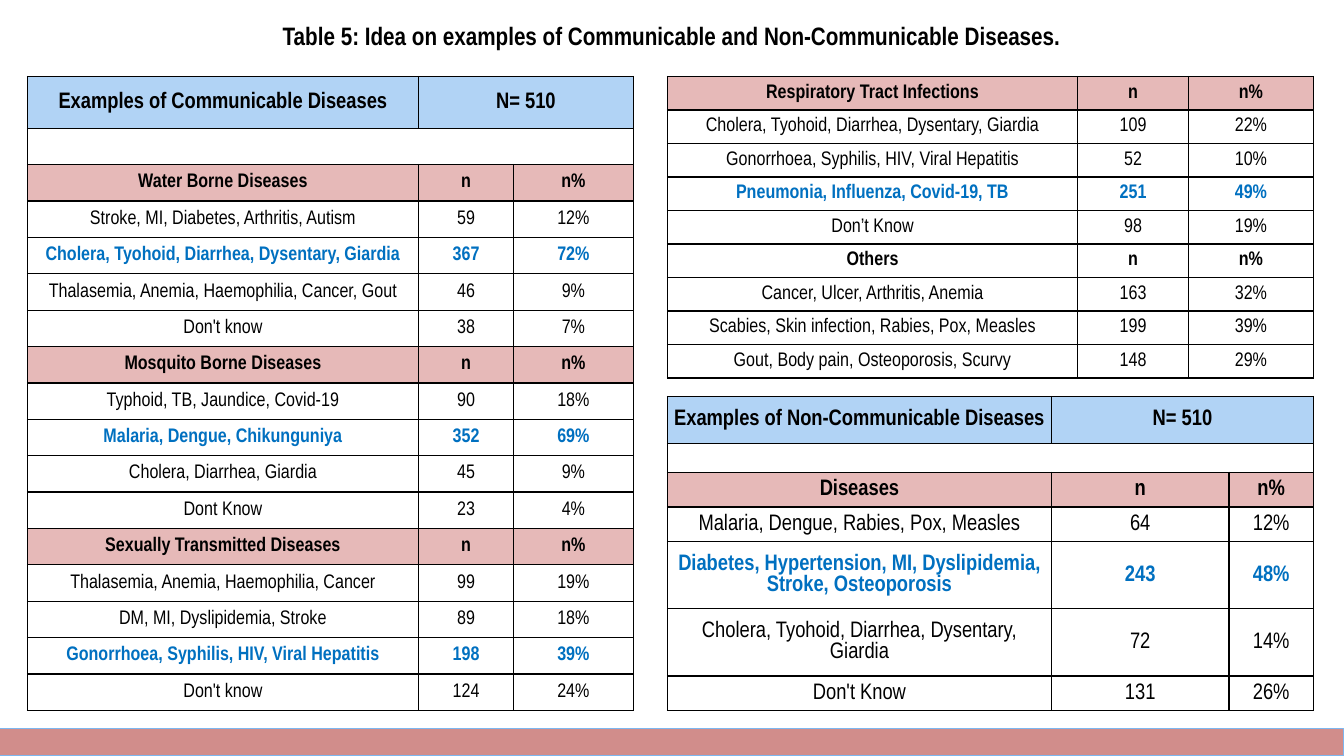
from dataclasses import dataclass
from typing import NamedTuple, Optional

from lxml import etree
from pptx import Presentation
from pptx.dml import color, fill
from pptx.enum import shapes, text
from pptx.oxml import ns
from pptx.util import Cm, Pt

FONT = "Arial Narrow"
COLOURS = {
    "black": "000000",
    "white": "FFFFFF",
    "answer": "0070C0",
    "band": "B1D3F5",
    "section": "E6B9B8",
    "footer": "D18D8B",
    "footer_line": "7DB6EF",
}


class Style(NamedTuple):
    fill: str
    colour: str
    bold: bool


BAND = Style("band", "black", True)
SECTION = Style("section", "black", True)
PLAIN_SECTION = Style("white", "black", True)
OPTION = Style("white", "black", False)
ANSWER = Style("white", "answer", True)


@dataclass
class Row:
    cells: tuple[str, ...]
    style: Style = OPTION
    height: Optional[float] = None  # rows without one share what is left


@dataclass
class DiseaseTable:
    left: float
    top: float
    height: float
    columns: tuple[float, ...]
    size: int
    rows: list[Row]


def section(name: str, style: Style = SECTION) -> Row:
    return Row((name, "n", "n%"), style)


def band(name: str, height: float) -> Row:
    return Row((name, "N= 510"), BAND, height)


# Table contents
communicable = DiseaseTable(0.69, 1.93, 15.98, (9.86, 2.39, 3.02), 14, [
    band("Examples of Communicable Diseases", 1.3),
    Row(("",)),
    section("Water Borne Diseases"),
    Row(("Stroke, MI, Diabetes, Arthritis, Autism", "59", "12%")),
    Row(("Cholera, Tyohoid, Diarrhea, Dysentary, Giardia", "367", "72%"), ANSWER),
    Row(("Thalasemia, Anemia, Haemophilia, Cancer, Gout", "46", "9%")),
    Row(("Don't know", "38", "7%")),
    section("Mosquito Borne Diseases"),
    Row(("Typhoid, TB, Jaundice, Covid-19", "90", "18%")),
    Row(("Malaria, Dengue, Chikunguniya", "352", "69%"), ANSWER),
    Row(("Cholera, Diarrhea, Giardia", "45", "9%")),
    Row(("Dont Know", "23", "4%")),
    section("Sexually Transmitted Diseases"),
    Row(("Thalasemia, Anemia, Haemophilia, Cancer", "99", "19%")),
    Row(("DM, MI, Dyslipidemia, Stroke", "89", "18%")),
    Row(("Gonorrhoea, Syphilis, HIV, Viral Hepatitis", "198", "39%"), ANSWER),
    Row(("Don't know", "124", "24%")),
])

respiratory = DiseaseTable(16.82, 1.93, 7.6, (10.34, 2.79, 3.15), 14, [
    section("Respiratory Tract Infections"),
    Row(("Cholera, Tyohoid, Diarrhea, Dysentary, Giardia", "109", "22%")),
    Row(("Gonorrhoea, Syphilis, HIV, Viral Hepatitis", "52", "10%")),
    Row(("Pneumonia, Influenza, Covid-19, TB", "251", "49%"), ANSWER),
    Row(("Don’t Know", "98", "19%")),
    section("Others", PLAIN_SECTION),
    Row(("Cancer, Ulcer, Arthritis, Anemia", "163", "32%")),
    Row(("Scabies, Skin infection, Rabies, Pox, Measles", "199", "39%")),
    Row(("Gout, Body pain, Osteoporosis, Scurvy", "148", "29%")),
])

non_communicable = DiseaseTable(16.82, 9.99, 7.92, (9.68, 4.47, 2.13), 16, [
    band("Examples of Non-Communicable Diseases", 1.19),
    Row(("",), height=0.72),
    section("Diseases"),
    Row(("Malaria, Dengue, Rabies, Pox, Measles", "64", "12%")),
    Row(("Diabetes, Hypertension, MI, Dyslipidemia, Stroke, Osteoporosis",
         "243", "48%"), ANSWER, 1.69),
    Row(("Cholera, Tyohoid, Diarrhea, Dysentary, Giardia", "72", "14%"),
        height=1.69),
    Row(("Don't Know", "131", "26%")),
])


def rgb(name: str) -> color.RGBColor:
    return color.RGBColor.from_string(COLOURS[name])


def write(frame, words: str, size: int, colour: str, bold: bool) -> None:
    paragraph = frame.paragraphs[0]
    paragraph.text = words
    paragraph.alignment = text.PP_ALIGN.CENTER
    paragraph.font.name = FONT
    paragraph.font.size = Pt(size)
    paragraph.font.bold = bold
    paragraph.font.color.rgb = rgb(colour)


def paint(area: fill.FillFormat, colour: str) -> None:
    area.solid()
    area.fore_color.rgb = rgb(colour)


def add_borders(cell) -> None:
    properties = cell._tc.get_or_add_tcPr()
    for position, side in enumerate(("lnL", "lnR", "lnT", "lnB")):
        line = etree.Element(ns.qn(f"a:{side}"), w=str(Pt(1)))
        solid = etree.SubElement(line, ns.qn("a:solidFill"))
        etree.SubElement(solid, ns.qn("a:srgbClr"), val=COLOURS["black"])
        properties.insert(position, line)


def draw_table(slide, diseases: DiseaseTable) -> None:
    rows, columns = diseases.rows, diseases.columns
    grid = slide.shapes.add_table(
        len(rows), len(columns), Cm(diseases.left), Cm(diseases.top),
        Cm(sum(columns)), Cm(diseases.height)).table
    grid.first_row = grid.horz_banding = False
    for column, width in zip(grid.columns, columns):
        column.width = Cm(width)

    fixed = [row.height for row in rows if row.height]
    shared = (diseases.height - sum(fixed)) / (len(rows) - len(fixed))
    for r, row in enumerate(rows):
        grid.rows[r].height = Cm(row.height or shared)
        last = len(row.cells) - 1
        if last < len(columns) - 1:
            grid.cell(r, last).merge(grid.cell(r, len(columns) - 1))
        size = 16 if row.style is BAND else diseases.size
        for c in range(len(columns)):
            cell = grid.cell(r, c)
            cell.margin_left = cell.margin_right = Cm(0.08)
            cell.margin_top = cell.margin_bottom = 0
            cell.vertical_anchor = text.MSO_ANCHOR.MIDDLE
            words = row.cells[c] if c <= last else ""
            write(cell.text_frame, words, size, row.style.colour, row.style.bold)
            paint(cell.fill, row.style.fill)
            add_borders(cell)


def draw_title(slide) -> None:
    title = slide.shapes.add_textbox(Cm(6.2), Cm(0.38), Cm(21.46), Cm(1.02))
    title.text_frame.word_wrap = True
    write(title.text_frame,
          "Table 5: Idea on examples of Communicable and Non-Communicable Diseases.",
          18, "black", True)


def draw_footer(slide) -> None:
    footer = slide.shapes.add_shape(
        shapes.MSO_SHAPE.RECTANGLE, 0, Cm(18.36), Cm(33.87), Cm(0.69))
    footer.shadow.inherit = False
    paint(footer.fill, "footer")
    footer.line.color.rgb = rgb("footer_line")
    footer.line.width = Pt(0.75)


def main() -> None:
    deck = Presentation()
    deck.slide_width, deck.slide_height = Cm(33.87), Cm(19.05)
    slide = deck.slides.add_slide(deck.slide_layouts[6])
    draw_title(slide)
    for diseases in (communicable, respiratory, non_communicable):
        draw_table(slide, diseases)
    draw_footer(slide)
    deck.save("out.pptx")


if __name__ == "__main__":
    main()
